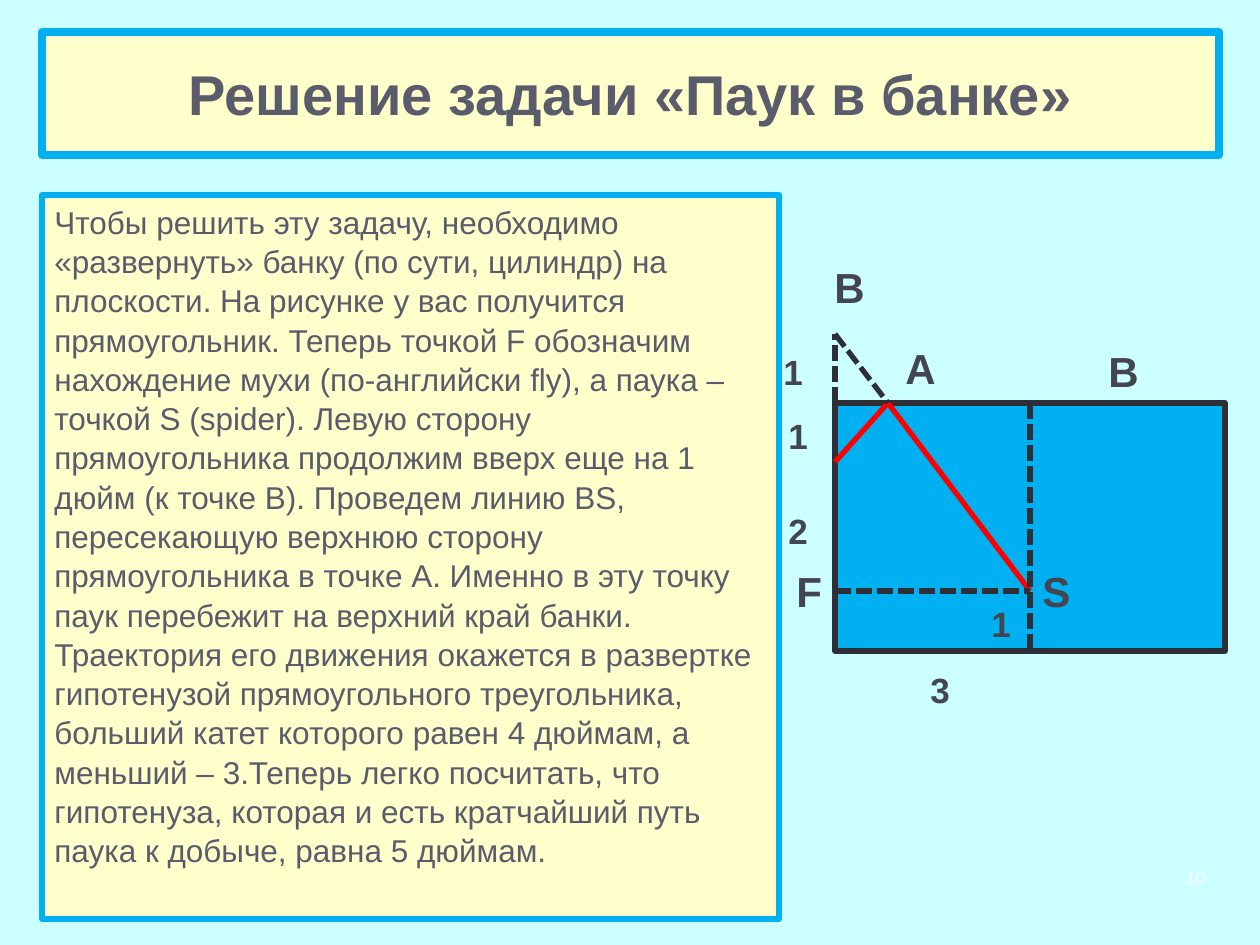
from lxml import etree
from pptx import Presentation
from pptx import util as u
from pptx.dml.color import RGBColor
from pptx.enum import dml, shapes, text
from pptx.oxml.ns import qn

PX = 914400 / 126
PAGE = RGBColor(0xCC, 0xFF, 0xFF)
CREAM = RGBColor(0xFF, 0xFF, 0xCC)
BLUE = RGBColor(0x00, 0xB0, 0xF0)
DARK = RGBColor(0x2D, 0x2E, 0x36)
RED = RGBColor(0xFF, 0x00, 0x00)
TEXT = RGBColor(0x5A, 0x5C, 0x6C)
LABEL = RGBColor(0x44, 0x45, 0x51)
WHITE = RGBColor(0xFF, 0xFF, 0xFF)

SOLUTION = (
    "Чтобы решить эту задачу, необходимо «развернуть» банку (по сути, цилиндр) на плоскости. "
    "На рисунке у вас получится прямоугольник. Теперь точкой F обозначим нахождение мухи "
    "(по-английски fly), а паука – точкой S (spider). Левую сторону прямоугольника продолжим "
    "вверх еще на 1 дюйм (к точке B). Проведем линию BS, пересекающую верхнюю сторону "
    "прямоугольника в точке А. Именно в эту точку паук перебежит на верхний край банки. "
    "Траектория его движения окажется в развертке гипотенузой прямоугольного треугольника, "
    "больший катет которого равен 4 дюймам, а меньший – 3.Теперь легко посчитать, что "
    "гипотенуза, которая и есть кратчайший путь паука к добыче, равна 5 дюймам."
)


def px(*lengths):
    return [round(length * PX) for length in lengths]


def write(shape, words, font, frame, align=text.PP_ALIGN.LEFT):
    for name, value in frame.items():
        setattr(shape.text_frame, name, value)
    paragraph = shape.text_frame.paragraphs[0]
    paragraph.alignment = align
    run = paragraph.add_run()
    run.text = words
    values = {"name": "Arial", **font}
    run.font.color.rgb = values.pop("color")
    for name, value in values.items():
        setattr(run.font, name, value)
    return paragraph


presentation = Presentation()
presentation.slide_width, presentation.slide_height = px(1260, 945)
slide = presentation.slides.add_slide(presentation.slide_layouts[6])
slide.background.fill.solid()
slide.background.fill.fore_color.rgb = PAGE

rectangles = []
for box, fill, line, width in [
    ((42, 32, 1177, 123), CREAM, BLUE, 4.5),
    ((42, 195, 737, 724), CREAM, BLUE, 3),
    ((835, 403, 390, 248), BLUE, DARK, 3),
]:
    shape = slide.shapes.add_shape(shapes.MSO_SHAPE.RECTANGLE, *px(*box))
    shape.shadow.inherit = False
    shape.fill.solid()
    shape.fill.fore_color.rgb = fill
    shape.line.color.rgb = line
    shape.line.width = u.Pt(width)
    rectangles.append(shape)
title, body, jar = rectangles

write(title, "Решение задачи «Паук в банке»",
      {"size": u.Pt(32), "bold": True, "color": TEXT},
      {"word_wrap": True, "vertical_anchor": text.MSO_ANCHOR.MIDDLE},
      text.PP_ALIGN.CENTER)
paragraph = write(body, SOLUTION, {"size": u.Pt(18), "color": TEXT},
                  {"word_wrap": True, "vertical_anchor": text.MSO_ANCHOR.TOP})
paragraph.line_spacing = 1.04

fly_side, edge, spider = (835, 462), (888, 403), (1030, 591)
corner, mirror = (835, 403), (835, 334)
connectors = []
for start, end, color, dash in [
    (fly_side, edge, RED, None),
    (edge, spider, RED, None),
    (mirror, edge, DARK, dml.MSO_LINE.SQUARE_DOT),
    ((835, 591), spider, DARK, dml.MSO_LINE.SQUARE_DOT),
    (corner, mirror, DARK, dml.MSO_LINE.SQUARE_DOT),
    ((1030, 403), (1030, 651), DARK, dml.MSO_LINE.SQUARE_DOT),
]:
    connector = slide.shapes.add_connector(shapes.MSO_CONNECTOR.STRAIGHT, *px(*start, *end))
    connector.line.color.rgb = color
    connector.line.width = u.Pt(3)
    connector.line.dash_style = dash
    etree.SubElement(connector._element.spPr, qn("a:effectLst"))
    connectors.append(connector)
middle = connectors[-1]
middle.begin_connect(jar, 0)
middle.end_connect(jar, 2)

for words, left, top, size in [
    ("B", 822, 255, 24), ("A", 893, 336, 24), ("B", 1096, 339, 24),
    ("S", 1030, 559, 24), ("F", 784, 559, 24),
    ("1", 771, 344, 20), ("1", 776, 408, 20), ("2", 776, 503, 20),
    ("3", 918, 662, 20), ("1", 979, 596, 20),
]:
    label = slide.shapes.add_textbox(*px(left, top, 50, 63 if size == 24 else 55))
    write(label, words, {"size": u.Pt(size), "bold": True, "color": LABEL},
          {"word_wrap": True, "auto_size": text.MSO_AUTO_SIZE.SHAPE_TO_FIT_TEXT})

number = slide.shapes.add_textbox(*px(1118, 858, 100, 40))
write(number, "10", {"size": u.Pt(10), "color": WHITE},
      {"word_wrap": True, "vertical_anchor": text.MSO_ANCHOR.MIDDLE},
      text.PP_ALIGN.RIGHT)

presentation.save("out.pptx")
